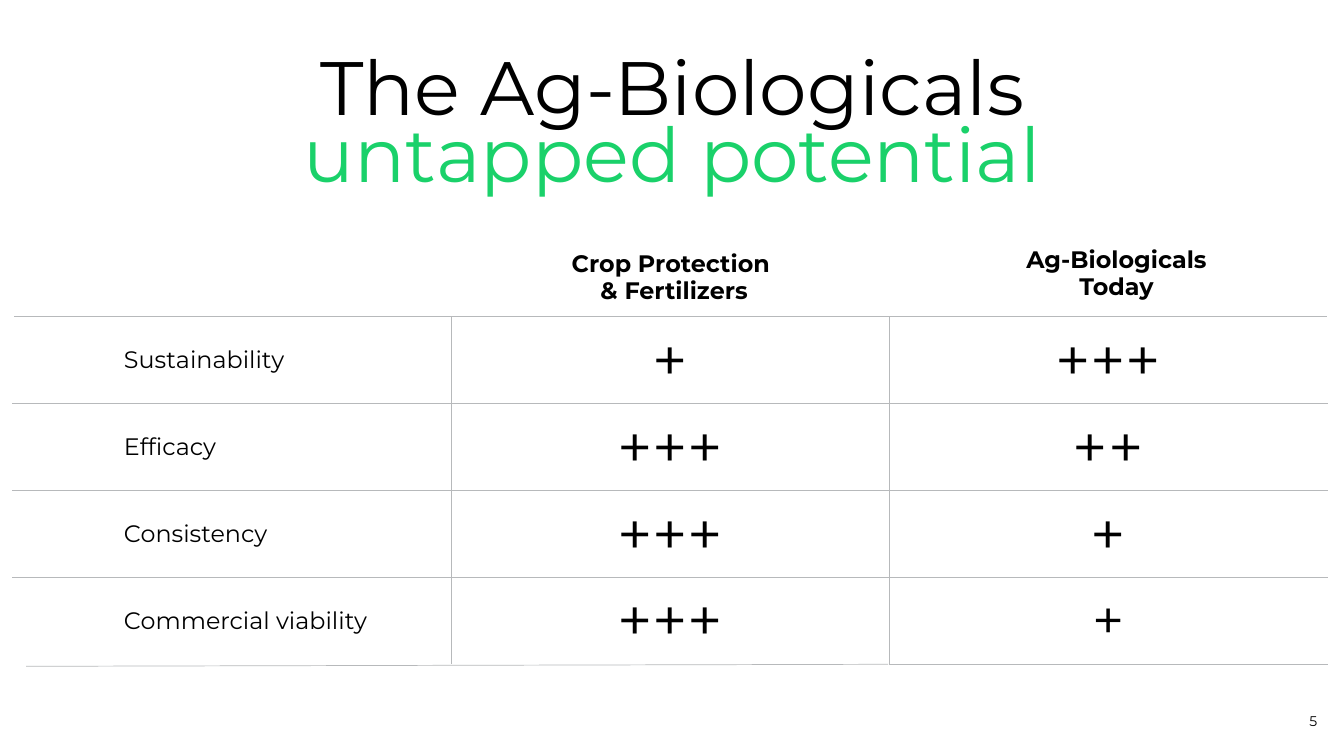
import dataclasses

import lxml.etree
import pptx
import pptx.dml.color
import pptx.enum.shapes
import pptx.enum.text
import pptx.oxml.ns
import pptx.util

Cm = pptx.util.Cm
Pt = pptx.util.Pt
Align = pptx.enum.text.PP_ALIGN
Anchor = pptx.enum.text.MSO_ANCHOR
Fit = pptx.enum.text.MSO_AUTO_SIZE


@dataclasses.dataclass(frozen=True)
class Theme:
    font: str = "Montserrat"
    ink: str = "000000"
    green: str = "1AD16A"
    rule: str = "B7B9BB"
    white: str = "FFFFFF"
    title: int = 54
    body: int = 17
    mark: int = 44
    small: int = 40
    number: int = 10
    thin: float = 0.5


def apply(target, values):
    for name, value in values.items():
        setattr(target, name, value)


class Board:
    def __init__(self, deck, theme):
        self.theme = theme
        self.slide = deck.slides.add_slide(deck.slide_layouts[6])

    def label(self, para, text, size, color=None, bold=False):
        run = para.add_run()
        run.text = text
        apply(run.font, {"name": self.theme.font, "size": Pt(size), "bold": bold})
        run.font.color.rgb = pptx.dml.color.RGBColor.from_string(color or self.theme.ink)

    def box(self, place, anchor=Anchor.TOP, fit=Fit.SHAPE_TO_FIT_TEXT):
        shape = self.slide.shapes.add_textbox(*map(Cm, place))
        frame = shape.text_frame
        apply(frame, {"word_wrap": True, "auto_size": fit, "vertical_anchor": anchor})
        return frame

    def title(self, place, first, second):
        para = self.box(place).paragraphs[0]
        apply(para, {"alignment": Align.CENTER, "line_spacing": Pt(48)})
        self.label(para, first, self.theme.title)
        para.add_line_break()
        self.label(para, second, self.theme.title, self.theme.green)

    def header(self, place, lines):
        frame = self.box(place)
        for index, line in enumerate(lines):
            para = frame.add_paragraph() if index else frame.paragraphs[0]
            apply(para, {"alignment": Align.CENTER, "line_spacing": Pt(19)})
            self.label(para, line, self.theme.body, bold=True)

    def number(self, place, text):
        para = self.box(place, Anchor.MIDDLE, Fit.NONE).paragraphs[0]
        para.alignment = Align.RIGHT
        self.label(para, text, self.theme.number)

    def border(self, cell, side, color, width):
        props = cell._tc.get_or_add_tcPr()
        qn = pptx.oxml.ns.qn
        line = lxml.etree.SubElement(props, qn("a:ln" + side), w=str(Pt(width)))
        fill = lxml.etree.SubElement(line, qn("a:solidFill"))
        lxml.etree.SubElement(fill, qn("a:srgbClr"), val=color)

    def table(self, place, rows):
        high, wide = len(rows), len(rows[0])
        grid = self.slide.shapes.add_table(high, wide, *map(Cm, place)).table
        apply(grid, {"first_row": False, "horz_banding": False})
        for y, row in enumerate(rows):
            for x, (text, size) in enumerate(row):
                cell = grid.cell(y, x)
                blank = {
                    "L": x == 0,
                    "R": x == wide - 1,
                    "T": False,
                    "B": y == high - 1 and x < wide - 1,
                }
                for side, bare in blank.items():
                    color = self.theme.white if bare else self.theme.rule
                    self.border(cell, side, color, 1 if bare else self.theme.thin)
                cell.fill.background()
                cell.vertical_anchor = Anchor.MIDDLE
                para = cell.text_frame.paragraphs[0]
                if x:
                    para.alignment = Align.CENTER
                else:
                    apply(para, {"alignment": Align.LEFT, "level": 2})
                    props = para._p.get_or_add_pPr()
                    props.set("marL", str(Cm(2.54)))
                    props.set("indent", "0")
                self.label(para, text, size)

    def line(self, ends):
        kind = pptx.enum.shapes.MSO_CONNECTOR.STRAIGHT
        rule = self.slide.shapes.add_connector(kind, *map(Cm, ends))
        rule.line.width = Pt(self.theme.thin)
        rule.line.color.rgb = pptx.dml.color.RGBColor.from_string(self.theme.rule)
        lxml.etree.SubElement(rule._element.spPr, pptx.oxml.ns.qn("a:effectLst"))


def main():
    deck = pptx.Presentation()
    apply(deck, {"slide_width": Cm(33.87), "slide_height": Cm(19.05)})
    theme = Theme()
    board = Board(deck, theme)
    board.number((25.83, 17.65, 7.62, 1.02), "5")
    board.title((4.75, 1.47, 24.38, 3.73), "The Ag-Biologicals", "untapped potential")
    board.header((11.35, 6.2, 11.28, 1.6), ["Crop Protection ", "& Fertilizers"])
    board.header((22.5, 6.1, 11.28, 1.6), ["Ag-Biologicals", "Today"])
    scores = [
        ("Sustainability", 1, 3, theme.mark),
        ("Efficacy", 3, 2, theme.mark),
        ("Consistency", 3, 1, theme.mark),
        ("Commercial viability", 3, 1, theme.small),
    ]
    rows = [
        [(name, theme.body), ("+" * crop, theme.mark), ("+" * bio, size)]
        for name, crop, bio, size in scores
    ]
    board.table((0.33, 7.98, 33.12, 8.76), rows)
    board.line((0.66, 16.79, 22.38, 16.74))
    deck.save("out.pptx")


if __name__ == "__main__":
    main()
